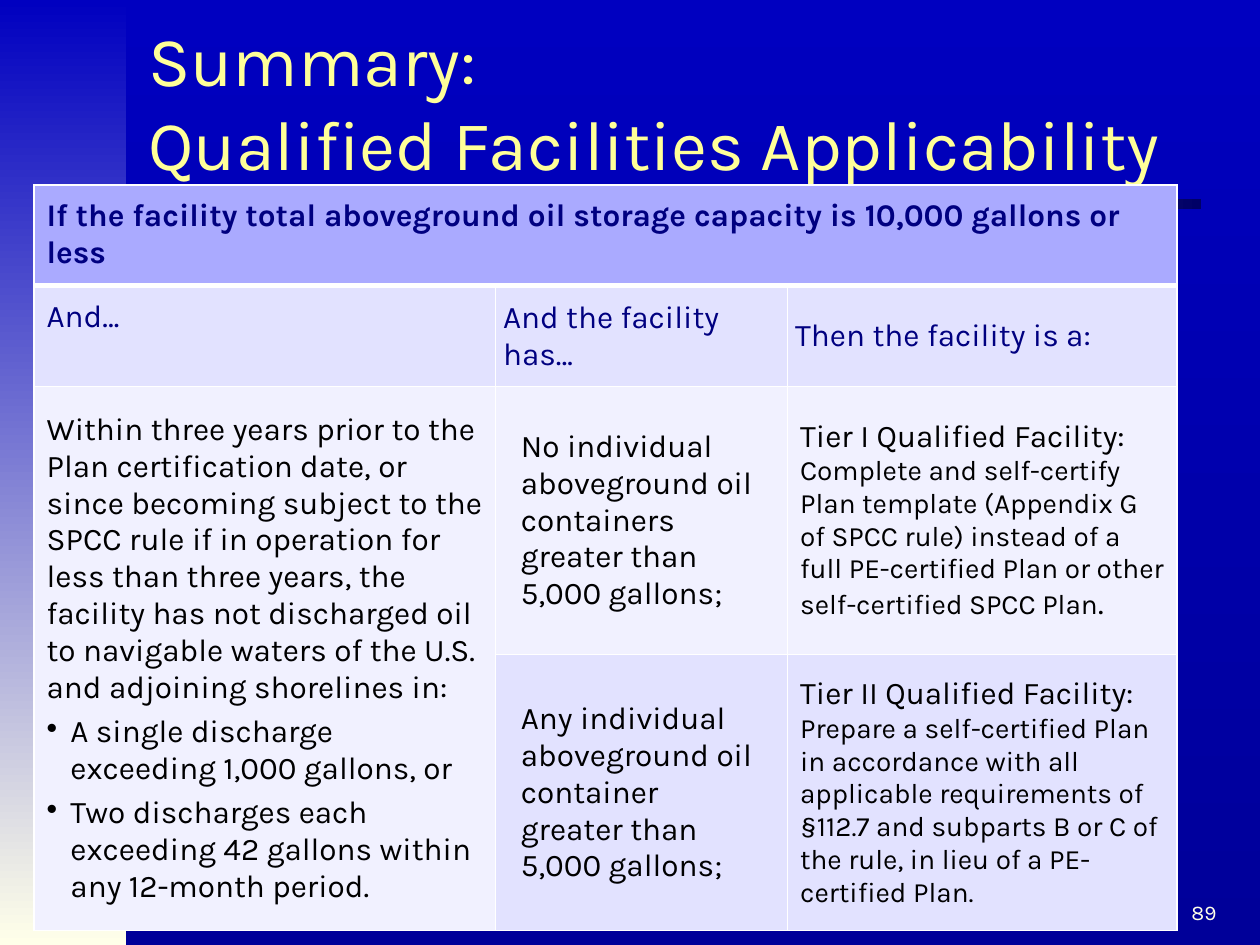
from dataclasses import dataclass

from lxml import etree
from pptx import Presentation
from pptx import util as u
from pptx.dml.color import RGBColor
from pptx.enum import shapes, text
from pptx.oxml import ns

Cm, Pt = u.Cm, u.Pt


@dataclass(frozen=True)
class Theme:
    font: str = "Karla"
    title_size: int = 40
    body_size: int = 18
    detail_size: int = 16
    number_size: int = 12
    title: str = "FFFF99"
    shadow: str = "808080"
    blue: str = "0000C0"
    deep_blue: str = "000099"
    midnight: str = "000066"
    cream: str = "FFFFE9"
    navy: str = "000080"
    black: str = "000000"
    white: str = "FFFFFF"
    banner: str = "AAAAFF"
    band_dark: str = "E2E2FF"
    band_light: str = "F1F1FF"


THEME = Theme()
DOWN, ACROSS = 270, 0


def add_element(parent, tag, **attributes):
    return etree.SubElement(parent, ns.qn(tag), attributes)


def fill_gradient(fill, colors, angle):
    fill.gradient()
    fill.gradient_angle = angle
    for stop, color in zip(fill.gradient_stops, colors):
        stop.color.rgb = RGBColor.from_string(color)


def add_run(paragraph, words, size, color, bold=False):
    run = paragraph.add_run()
    run.text = words
    run.font.name = THEME.font
    run.font.size = Pt(size)
    run.font.bold = bold
    run.font.color.rgb = RGBColor.from_string(color)
    return run


def add_gradient_bar(slide, box, colors, angle):
    bar = slide.shapes.add_shape(shapes.MSO_SHAPE.RECTANGLE, *map(Cm, box))
    bar.shadow.inherit = False
    bar.line.fill.background()
    fill_gradient(bar.fill, colors, angle)


def add_backdrop(slide):
    fill_gradient(slide.background.fill, (THEME.blue, THEME.deep_blue), DOWN)
    add_gradient_bar(slide, (0, 0, 2.54, 19.05), (THEME.blue, THEME.cream), DOWN)
    add_gradient_bar(slide, (1.06, 4.01, 23.16, 0.21), (THEME.cream, THEME.midnight), ACROSS)


def add_text_frame(slide, box, anchor):
    frame = slide.shapes.add_textbox(*map(Cm, box)).text_frame
    frame.word_wrap = True
    frame.vertical_anchor = anchor
    return frame


def add_title(slide, box, lines):
    paragraph = add_text_frame(slide, box, text.MSO_ANCHOR.MIDDLE).paragraphs[0]
    for index, line in enumerate(lines):
        if index:
            paragraph.add_line_break()
        run = add_run(paragraph, line, THEME.title_size, THEME.title)
        effects = etree.Element(ns.qn("a:effectLst"))
        shadow = add_element(effects, "a:outerShdw", dist="38100", dir="2700000")
        add_element(shadow, "a:srgbClr", val=THEME.shadow)
        run.font.fill._xPr.find(ns.qn("a:solidFill")).addnext(effects)


def add_page_number(slide, box, number):
    paragraph = add_text_frame(slide, box, text.MSO_ANCHOR.TOP).paragraphs[0]
    add_run(paragraph, number, THEME.number_size, THEME.cream)


def style_cell(cell, color, margins, anchor=text.MSO_ANCHOR.MIDDLE, top=1, bottom=1):
    """Margins are (side, top and bottom) in centimetres; top and bottom are border points."""
    cell.margin_left = cell.margin_right = Cm(margins[0])
    cell.margin_top = cell.margin_bottom = Cm(margins[1])
    cell.vertical_anchor = anchor
    properties = cell._tc.get_or_add_tcPr()
    for side, width in (("L", 1), ("R", 1), ("T", top), ("B", bottom)):
        line = add_element(properties, f"a:ln{side}", w=str(Pt(width)))
        add_element(add_element(line, "a:solidFill"), "a:srgbClr", val=THEME.white)
    cell.fill.solid()
    cell.fill.fore_color.rgb = RGBColor.from_string(color)


def write_cell(cell, words, color=THEME.black, bold=False):
    add_run(cell.text_frame.paragraphs[0], words, THEME.body_size, color, bold)


def write_condition(cell, introduction, bullets):
    write_cell(cell, introduction)
    cell.text_frame.paragraphs[0].space_after = Pt(2)
    for bullet in bullets:
        paragraph = cell.text_frame.add_paragraph()
        properties = paragraph._p.get_or_add_pPr()
        properties.set("marL", str(Cm(0.48)))
        properties.set("indent", str(-Cm(0.48)))
        add_element(properties, "a:buChar", char="•")
        paragraph.space_before = paragraph.space_after = Pt(2)
        add_run(paragraph, bullet, THEME.body_size, THEME.black)


def write_tier(cell, heading, detail, ending):
    write_cell(cell, heading)
    paragraph = cell.text_frame.paragraphs[0]
    paragraph.add_line_break()
    add_run(paragraph, detail, THEME.detail_size, THEME.black)
    if ending:
        add_run(paragraph, ending, THEME.body_size, THEME.black)


def add_applicability_table(slide, box):
    column_widths = (9.3, 5.89, 7.85)
    row_heights = (2.03, 2.03, 5.41, 5.56)
    table = slide.shapes.add_table(4, 3, *map(Cm, box)).table
    table.first_row = table.horz_banding = False
    for column, width in zip(table.columns, column_widths):
        column.width = Cm(width)
    for row, height in zip(table.rows, row_heights):
        row.height = Cm(height)
    table.cell(0, 0).merge(table.cell(0, 2))
    table.cell(2, 0).merge(table.cell(3, 0))

    for column in range(3):
        style_cell(table.cell(0, column), THEME.banner, (0.25, 0.25), text.MSO_ANCHOR.TOP, bottom=3)
    write_cell(
        table.cell(0, 0),
        "If the facility total aboveground oil storage capacity is 10,000 gallons or less",
        THEME.navy, bold=True)

    headings = (
        ("And…", 0.25, text.MSO_ANCHOR.TOP),
        ("And the facility has…", 0.15, text.MSO_ANCHOR.MIDDLE),
        ("Then the facility is a:", 0.15, text.MSO_ANCHOR.MIDDLE),
    )
    for column, (heading, side, anchor) in enumerate(headings):
        cell = table.cell(1, column)
        style_cell(cell, THEME.band_dark, (side, 0.25), anchor, top=3)
        write_cell(cell, heading, THEME.navy)

    tiers = (
        (THEME.band_light,
         "No individual aboveground oil containers greater than 5,000 gallons;",
         "Tier I Qualified Facility:",
         "Complete and self-certify Plan template (Appendix G of SPCC rule) instead of "
         "a full PE-certified Plan or other self-certified SPCC Plan", "."),
        (THEME.band_dark,
         "Any individual aboveground oil container greater than 5,000 gallons;",
         "Tier II Qualified Facility:",
         "Prepare a self-certified Plan in accordance with all applicable requirements of "
         "§112.7 and subparts B or C of the rule, in lieu of a PE-certified Plan.", ""),
    )
    for row, (color, containers, heading, detail, ending) in enumerate(tiers, start=2):
        style_cell(table.cell(row, 0), THEME.band_light, (0.25, 0.13))
        style_cell(table.cell(row, 1), color, (0.51, 0.13))
        style_cell(table.cell(row, 2), color, (0.25, 0.13))
        write_cell(table.cell(row, 1), containers)
        write_tier(table.cell(row, 2), heading, detail, ending)
    write_condition(
        table.cell(2, 0),
        "Within three years prior to the Plan certification date, or since becoming subject "
        "to the SPCC rule if in operation for less than three years, the facility has not "
        "discharged oil to navigable waters of the U.S. and adjoining shorelines in:",
        ("A single discharge exceeding 1,000 gallons, or",
         "Two discharges each exceeding 42 gallons within any 12-month period."))


def main():
    presentation = Presentation()
    presentation.slide_width, presentation.slide_height = Cm(25.4), Cm(19.05)
    slide = presentation.slides.add_slide(presentation.slide_layouts[6])
    add_backdrop(slide)
    add_page_number(slide, (23.77, 18.01, 1.52, 0.76), "89")
    add_title(slide, (2.74, 0.43, 21.89, 3.18), ("Summary:", "Qualified Facilities Applicability"))
    add_applicability_table(slide, (0.69, 3.73, 23.04, 15.03))
    presentation.save("out.pptx")


if __name__ == "__main__":
    main()
